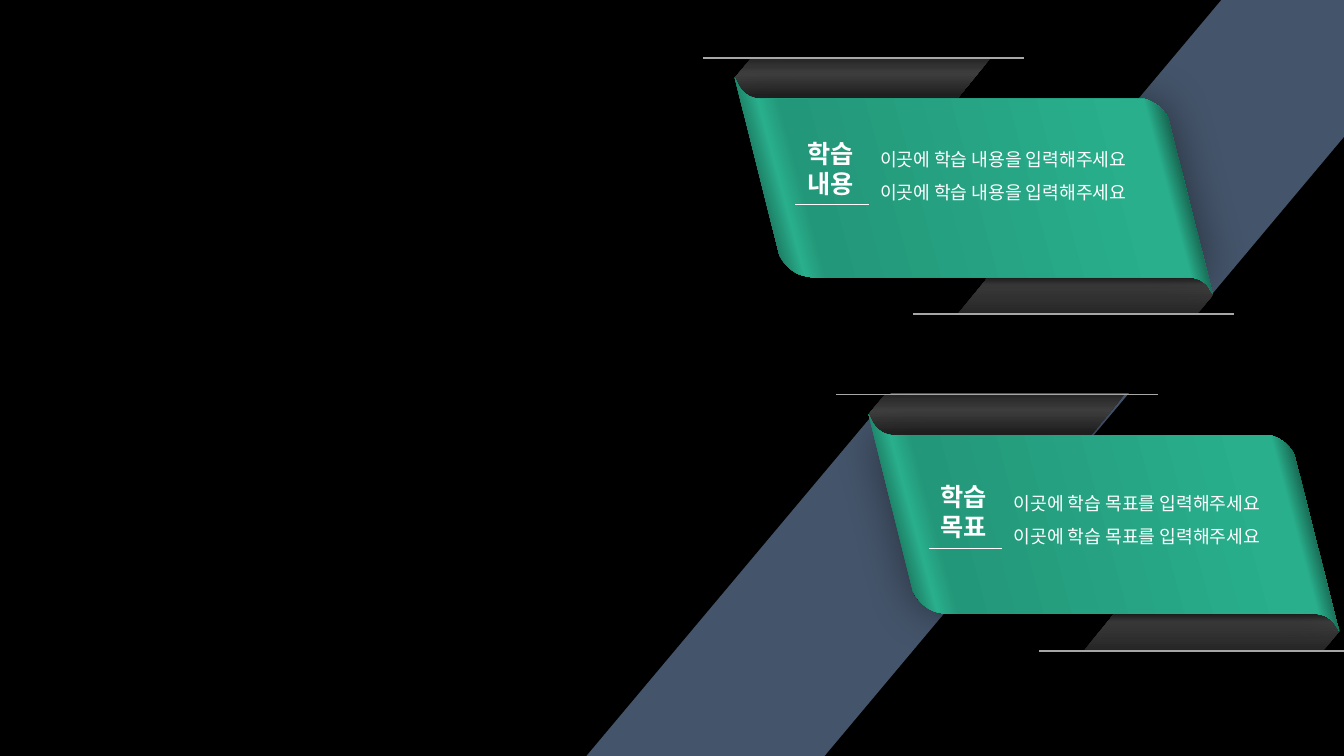
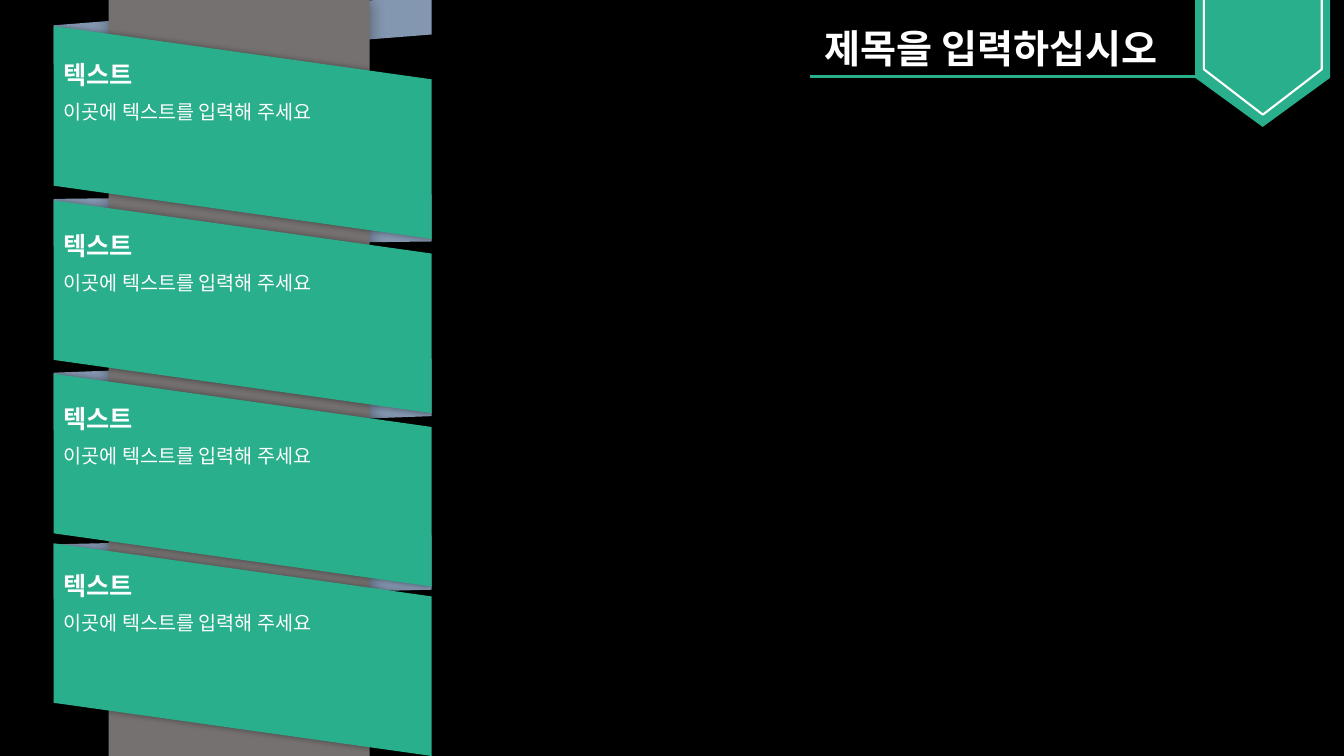
from pptx import Presentation
from pptx.dml.color import RGBColor
from pptx.enum.shapes import MSO_CONNECTOR, MSO_SHAPE
from pptx.oxml import parse_xml
from pptx.oxml.ns import nsdecls, qn
from pptx.util import Cm, Pt

BLACK = RGBColor(0x00, 0x00, 0x00)
WHITE = RGBColor(0xFF, 0xFF, 0xFF)
GREEN = RGBColor(0x29, 0xAF, 0x8C)
DEEP = RGBColor(0x23, 0x97, 0x79)
NAVY = RGBColor(0x44, 0x54, 0x6A)
STEEL = RGBColor(0x84, 0x97, 0xB0)
STONE = RGBColor(0x76, 0x71, 0x71)
SILVER = RGBColor(0xA8, 0xA8, 0xA8)
COAL = RGBColor(0x26, 0x26, 0x26)
SMOKE = RGBColor(0x40, 0x40, 0x40)

WIDE, HIGH = 33.87, 19.05

BANNERS = [
    dict(left=18.52, right=30.58, top=1.96, text=3.35,
         label=["학습", "내용"], body=["이곳에 학습 내용을 입력해주세요"] * 2),
    dict(left=21.89, right=33.76, top=10.44, text=12.01,
         label=["학습", "목표"], body=["이곳에 학습 목표를 입력해주세요"] * 2),
]
BEAMS = [
    [(22.45, 9.91), (28.45, 9.91), (20.78, HIGH), (14.78, HIGH)],
    [(30.78, 0), (WIDE, 0), (WIDE, 3.45), (30.12, 7.92), (24.13, 7.92)],
]
TAIL = [(0.41, -0.5), (6.45, -0.5), (5.51, 0.64), (5.23, 0.64),
        (5.31, 0.94), (0.3, 0.94), (0, 0)]
DROP = 5.46
RIBBON = [
    [(0, 0)],
    [(0.05, 0.1), (0.15, 0.36), (0.38, 0.53), (0.64, 0.53)],
    [(-1.93, 0.53)],
    [(-1.75, 0.53), (-1.55, 0.58), (-1.35, 0.71), (-1.22, 0.89)],
    [(-1.14, 1.02)],
    [(-0.02, 5.44)],
    [(-0.15, 5.23), (-0.28, 5.11), (-0.43, 5.03), (-0.61, 5.03)],
    [(1.96, 5.03)],
    [(1.78, 5.0), (1.5, 4.95), (1.27, 4.75), (1.12, 4.47)],
]
SHEEN = [(0, BLACK), (14, GREEN), (18, DEEP), (82, GREEN), (86, GREEN), (95, BLACK)]
UPPER = [(0, COAL), (28, SMOKE), (67, COAL)]
LOWER = [(0, COAL), (51, SMOKE), (64, COAL)]

TITLE = "제목을 입력하십시오"
HEAD, NOTE = "텍스트", "이곳에 텍스트를 입력해 주세요"
FOLD_X, FOLD_W, FOLD_H = 1.35, 9.53, 5.36
FOLDS = [(0.66, 1.37), (5.05, 5.69), (9.42, 10.03), (13.69, 14.25)]
BACKS = [(9.04, 1.8, 0.196), (-0.11, 1.73, 0.433),
         (13.49, 1.6, 0.143), (4.9, 1.3, 0.087)]


def paint(shape, fill, blur=0, turn=0):
    if isinstance(fill, list):
        stops = "".join(
            f'<a:gs pos="{at * 1000}"><a:srgbClr val="{tone}"/></a:gs>'
            for at, tone in fill)
        shape.fill.background()
        props = shape.element.spPr
        props.replace(props.find(qn("a:noFill")), parse_xml(
            f'<a:gradFill {nsdecls("a")} rotWithShape="1"><a:gsLst>{stops}</a:gsLst>'
            f'<a:lin ang="{turn * 60000}" scaled="0"/></a:gradFill>'))
    else:
        shape.fill.solid()
        shape.fill.fore_color.rgb = fill
    shape.line.fill.background()
    shape.shadow.inherit = False
    if blur:
        shape.element.spPr.find(qn("a:effectLst")).append(parse_xml(
            f'<a:outerShdw {nsdecls("a")} blurRad="{Pt(blur)}" dist="0" algn="ctr" '
            f'rotWithShape="0"><a:srgbClr val="{BLACK}"><a:alpha val="40000"/>'
            '</a:srgbClr></a:outerShdw>'))
    return shape


def outline(slide, dots, fill, **style):
    first, *rest = [(Cm(x), Cm(y)) for x, y in dots]
    pen = slide.shapes.build_freeform(*first)
    pen.add_line_segments(rest, close=True)
    return paint(pen.convert_to_shape(), fill, **style)


def upright(slide, kind, x, y, w, h, fill, adj, flip=False, blur=0):
    shape = slide.shapes.add_shape(
        kind, Cm(x + (w - h) / 2), Cm(y + (h - w) / 2), Cm(h), Cm(w))
    shape.rotation = 90
    shape.adjustments[0] = adj
    if flip:
        shape.element.spPr.xfrm.set("flipV", "1")
    return paint(shape, fill, blur)


def rule(slide, x, y, length, tone, weight):
    line = slide.shapes.add_connector(
        MSO_CONNECTOR.STRAIGHT, Cm(x), Cm(y), Cm(x + length), Cm(y))
    line.line.color.rgb = tone
    line.line.width = Pt(weight)
    line.element.spPr.append(parse_xml(f'<a:effectLst {nsdecls("a")}/>'))


def write(slide, lines, x, y, w, h, size=18, font="Calibri", bold=False, space=1):
    frame = slide.shapes.add_textbox(Cm(x), Cm(y), Cm(w), Cm(h)).text_frame
    frame.word_wrap = True
    for i, line in enumerate(lines):
        para = frame.add_paragraph() if i else frame.paragraphs[0]
        para.line_spacing = space
        run = para.add_run()
        run.text = line
        run.font.size = Pt(size)
        run.font.name = font
        run.font.bold = bold
        run.font.color.rgb = WHITE


def curve(part, steps=12):
    if len(part) == 1:
        return part
    dots = []
    for i in range(steps + 1):
        t = i / steps
        mix = ((1 - t) ** 3, 3 * t * (1 - t) ** 2, 3 * t * t * (1 - t), t ** 3)
        dots.append(tuple(sum(m * p[k] for m, p in zip(mix, part)) for k in (0, 1)))
    return dots


def banner(slide, left, right, top, text, label, body):
    outline(slide, [(right - x, top + DROP - y) for x, y in TAIL], LOWER, turn=270)
    outline(slide, [(left + x, top + y) for x, y in TAIL], UPPER, turn=90)
    rule(slide, left - 0.81, top - 0.5, 8.1, SILVER, 1.25)
    rule(slide, right + 0.53 - 8.1, top + DROP + 0.5, 8.1, SILVER, 1.25)
    dots = [((right if x < 0 else left) + x, top + y)
            for part in RIBBON for x, y in curve(part)]
    outline(slide, dots, SHEEN, blur=32, turn=345)
    write(slide, label, left + 1.57, text, 2.2, 1.8, font="Arial", bold=True)
    rule(slide, left + 1.52, text + 1.8, 1.85, WHITE, 0.5)
    write(slide, body, left + 3.41, text, 7.6, 1.9, size=13, space=1.5)


def page(deck):
    slide = deck.slides.add_slide(deck.slide_layouts[6])
    slide.background.fill.solid()
    slide.background.fill.fore_color.rgb = BLACK
    return slide


def goals(deck):
    slide = page(deck)
    for beam in BEAMS:
        outline(slide, beam, NAVY)
    for item in BANNERS:
        banner(slide, **item)


def topics(deck):
    slide = page(deck)
    slant, plate = MSO_SHAPE.PARALLELOGRAM, MSO_SHAPE.PENTAGON
    for y, h, adj in BACKS:
        upright(slide, slant, FOLD_X, y, FOLD_W, h, STEEL, adj, flip=True)
    post = slide.shapes.add_shape(
        MSO_SHAPE.RECTANGLE, Cm(2.74), Cm(0), Cm(6.58), Cm(HIGH))
    paint(post, STONE, blur=11)
    for y, _ in FOLDS:
        upright(slide, slant, FOLD_X, y, FOLD_W, FOLD_H, GREEN, 0.25, blur=5)
    for _, y in FOLDS:
        write(slide, [HEAD], FOLD_X, y, 2.72, 1.02, bold=True)
        write(slide, [NOTE], FOLD_X, y + 1.02, FOLD_W, 0.86, size=14)
    rule(slide, 20.42, 1.93, 9.76, GREEN, 1.75)
    upright(slide, plate, 30.12, 0, 3.4, 3.2, GREEN, 0.387)
    inner = upright(slide, plate, 30.34, -0.06, 2.97, 2.95, GREEN, 0.387)
    inner.line.color.rgb = WHITE
    inner.line.width = Pt(1.5)
    write(slide, [TITLE], 20.52, 0.48, 9.73, 1.45, size=28, bold=True)


def main():
    deck = Presentation()
    deck.slide_width, deck.slide_height = Cm(WIDE), Cm(HIGH)
    goals(deck)
    topics(deck)
    deck.save("out.pptx")


if __name__ == "__main__":
    main()
